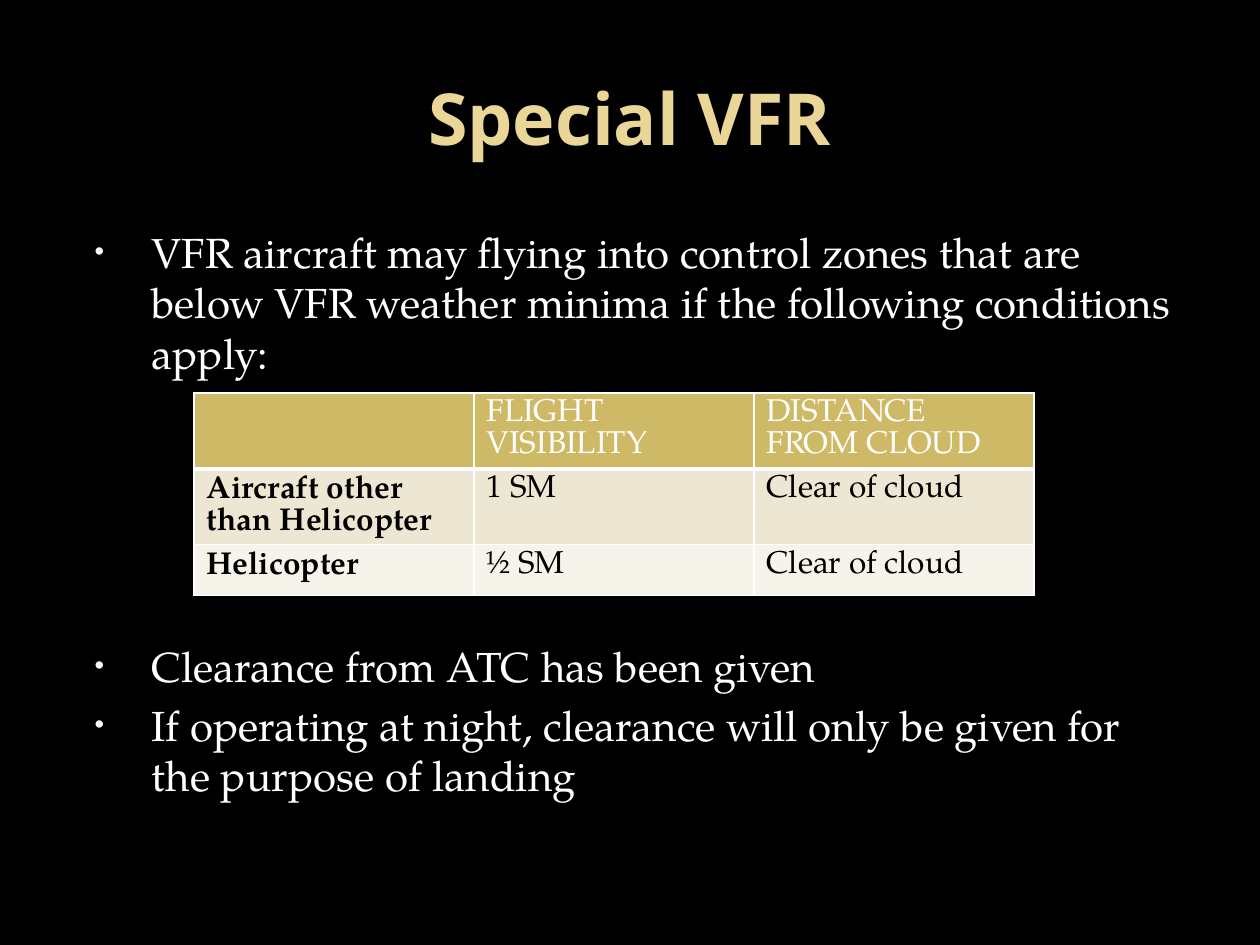
from lxml.etree import SubElement
from pptx import Presentation
from pptx.dml.color import RGBColor
from pptx.enum.text import MSO_ANCHOR, MSO_AUTO_SIZE, PP_ALIGN
from pptx.oxml import parse_xml
from pptx.oxml.ns import nsdecls, qn
from pptx.util import Emu, Pt

SCALE = 914400 / 126
BLACK = RGBColor(0x00, 0x00, 0x00)
WHITE = RGBColor(0xFF, 0xFF, 0xFF)
GOLD = RGBColor(0xEA, 0xD6, 0x96)
BULLET = RGBColor(0xF9, 0xF9, 0xF9)
ROW_FILLS = [RGBColor(0xCE, 0xB9, 0x66), RGBColor(0xED, 0xE6, 0xD3), RGBColor(0xF6, 0xF3, 0xEA)]
HEAD_FONT = "Open Sans"
TEXT_FONT = "TeX Gyre Pagella"

ITEMS = [
    ("VFR aircraft may flying into control zones that are below VFR weather minima "
     "if the following conditions apply:", 5),
    ("Clearance from ATC has been given", 150),
    ("If operating at night, clearance will only be given for the purpose of landing", 5),
]
MINIMA = [
    ["", "FLIGHT VISIBILITY", "DISTANCE FROM CLOUD"],
    ["Aircraft other than Helicopter", "1 SM", "Clear of cloud"],
    ["Helicopter", "½ SM", "Clear of cloud"],
]
ROW_HEIGHTS = [76, 75, 51]


def px(n):
    return Emu(round(n * SCALE))


def apply(obj, **values):
    for name, value in values.items():
        setattr(obj, name, value)


def place(sp, box):
    apply(sp, **dict(zip(("left", "top", "width", "height"), map(px, box))))


def write(p, text, color, **font):
    r = p.add_run()
    r.text = text
    apply(r.font, **font)
    r.font.color.rgb = color


def add_bullet(p):
    pPr = p._p.get_or_add_pPr()
    pPr.set("marL", str(px(76)))
    pPr.set("indent", str(px(-57)))
    clr = SubElement(pPr, qn("a:buClr"))
    SubElement(clr, qn("a:srgbClr"), val=str(BULLET))
    SubElement(pPr, qn("a:buSzPct"), val="65000")
    SubElement(pPr, qn("a:buFont"), typeface="Arial")
    SubElement(pPr, qn("a:buChar"), char="•")


def set_borders(cell, widths):
    tcPr = cell._tc.get_or_add_tcPr()
    for i, (side, width) in enumerate(widths.items()):
        tcPr.insert(i, parse_xml(
            f'<a:ln{side} {nsdecls("a")} w="{Pt(width)}"><a:solidFill>'
            f'<a:srgbClr val="{WHITE}"/></a:solidFill></a:ln{side}>'))


def add_title(s, box):
    sp = s.shapes.title
    place(sp, box)
    tf = sp.text_frame
    apply(tf, vertical_anchor=MSO_ANCHOR.MIDDLE, auto_size=MSO_AUTO_SIZE.NONE)
    p = tf.paragraphs[0]
    p.alignment = PP_ALIGN.CENTER
    write(p, "Special VFR", GOLD, name=HEAD_FONT, size=Pt(41), bold=True)


def add_body(s, box):
    sp = s.placeholders[1]
    place(sp, box)
    tf = sp.text_frame
    apply(tf, vertical_anchor=MSO_ANCHOR.TOP, auto_size=MSO_AUTO_SIZE.NONE)
    for i, (text, before) in enumerate(ITEMS):
        p = tf.add_paragraph() if i else tf.paragraphs[0]
        p.space_before = Pt(before)
        add_bullet(p)
        write(p, text, WHITE, name=TEXT_FONT, size=Pt(24))


def add_minima(s, box):
    tbl = s.shapes.add_table(len(MINIMA), len(MINIMA[0]), *map(px, box)).table
    for row, height in zip(tbl.rows, ROW_HEIGHTS):
        row.height = px(height)
    for i, texts in enumerate(MINIMA):
        for j, text in enumerate(texts):
            cell = tbl.cell(i, j)
            cell.fill.solid()
            cell.fill.fore_color.rgb = ROW_FILLS[i]
            set_borders(cell, {"L": 1, "R": 1, "T": 3 if i == 1 else 1, "B": 1 if i else 3})
            p = cell.text_frame.paragraphs[0]
            p.line_spacing = Pt(18)
            if text:
                write(p, text, BLACK if i else WHITE, name=TEXT_FONT, size=Pt(18),
                      bold=i > 0 and j == 0)


def main():
    prs = Presentation()
    apply(prs, slide_width=px(1260), slide_height=px(945))
    s = prs.slides.add_slide(prs.slide_layouts[1])
    s.background.fill.solid()
    s.background.fill.fore_color.rgb = BLACK
    add_title(s, (63, 38, 1134, 157))
    add_body(s, (63, 220, 1134, 649))
    add_minima(s, (194, 393, 840, sum(ROW_HEIGHTS)))
    prs.save("out.pptx")


if __name__ == "__main__":
    main()
